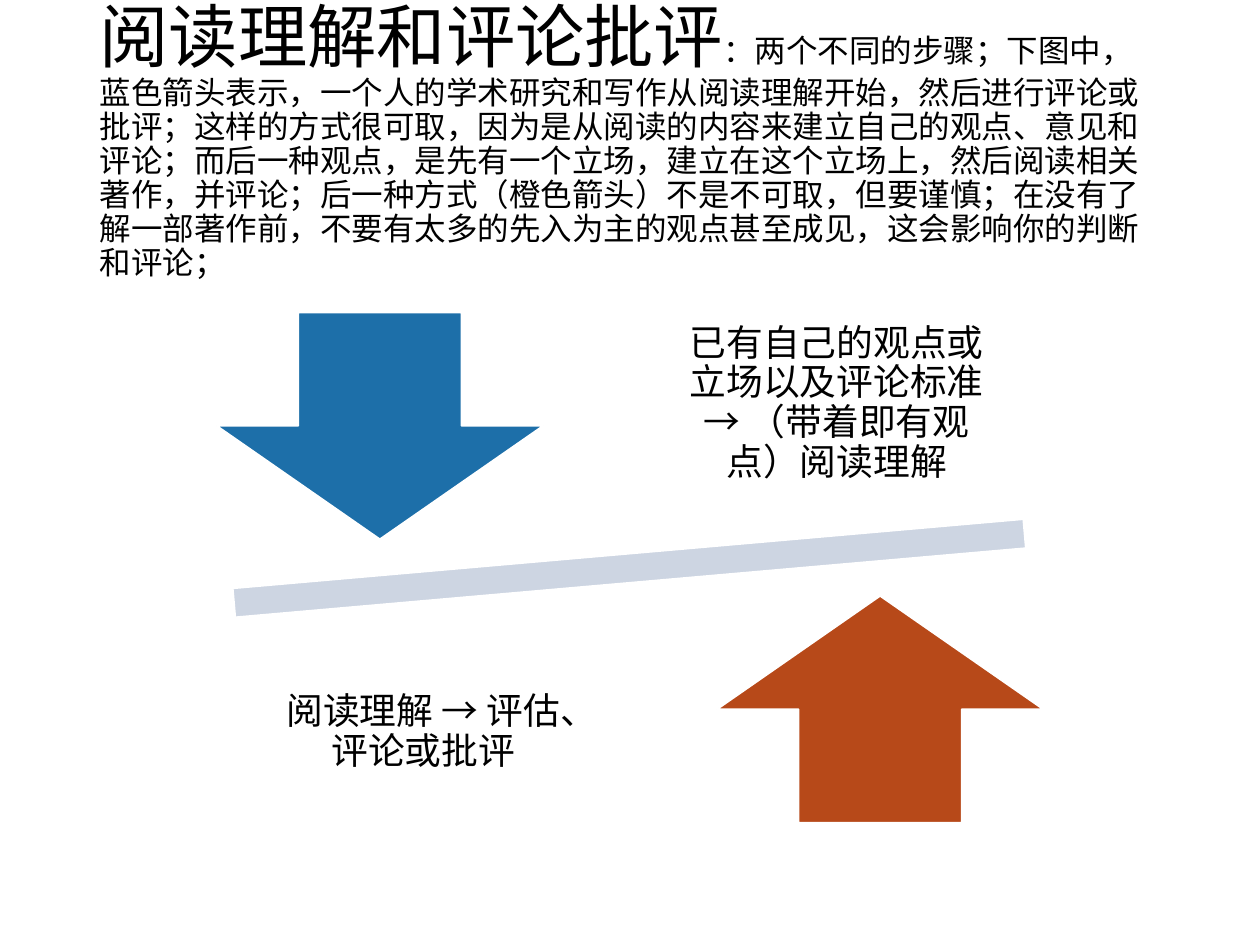
from dataclasses import dataclass

from pptx import Presentation
from pptx.dml.color import RGBColor
from pptx.enum import lang, shapes, text
from pptx.util import Inches, Pt


@dataclass(frozen=True)
class Theme:
    font: str = "Times New Roman"
    ink: RGBColor = RGBColor(0x00, 0x00, 0x00)
    outline: RGBColor = RGBColor(0xFF, 0xFF, 0xFF)
    beam: RGBColor = RGBColor(0xCD, 0xD5, 0xE2)
    reading_first: RGBColor = RGBColor(0x1D, 0x6F, 0xA9)
    opinion_first: RGBColor = RGBColor(0xB7, 0x49, 0x19)
    heading_size: float = 39.6
    explanation_size: float = 18
    caption_size: float = 21
    line_spacing: float = 0.9
    caption_gap: float = 0.35  # share of the caption size


@dataclass(frozen=True)
class Box:
    left: float
    top: float
    width: float
    height: float

    def lengths(self) -> tuple:
        return tuple(Inches(v) for v in (self.left, self.top, self.width, self.height))


@dataclass(frozen=True)
class Figure:
    preset: shapes.MSO_SHAPE
    box: Box
    color: RGBColor
    rotation: float = 0


@dataclass(frozen=True)
class Caption:
    wording: str
    box: Box


THEME = Theme()
ARROW_SIZE = (2.59, 1.8)
CAPTION_SIZE = (2.76, 1.89)

HEADING = "阅读理解和评论批评"
EXPLANATION = (
    "：两个不同的步骤；下图中，蓝色箭头表示，一个人的学术研究和写作从阅读理解开始，"
    "然后进行评论或批评；这样的方式很可取，因为是从阅读的内容来建立自己的观点、意见和评论；"
    "而后一种观点，是先有一个立场，建立在这个立场上，然后阅读相关著作，并评论；"
    "后一种方式（橙色箭头）不是不可取，但要谨慎；在没有了解一部著作前，"
    "不要有太多的先入为主的观点甚至成见，这会影响你的判断和评论；"
)
TITLE_BOX = Box(0.69, 0.4, 8.62, 1.45)

FIGURES = (
    Figure(shapes.MSO_SHAPE.MATH_MINUS, Box(0.71, 4.02, 8.57, 0.98), THEME.beam, 355),
    Figure(shapes.MSO_SHAPE.DOWN_ARROW, Box(1.72, 2.48, *ARROW_SIZE), THEME.reading_first),
    Figure(shapes.MSO_SHAPE.UP_ARROW, Box(5.69, 4.73, *ARROW_SIZE), THEME.opinion_first),
)
CAPTIONS = (
    Caption("已有自己的观点或立场以及评论标准 → （带着即有观点）阅读理解", Box(5.26, 2.26, *CAPTION_SIZE)),
    Caption("阅读理解 → 评估、评论或批评", Box(1.98, 4.87, *CAPTION_SIZE)),
)


def format_run(run, size: float) -> None:
    run.font.name = THEME.font
    run.font.size = Pt(size)
    run.font.color.rgb = THEME.ink
    run.font.language_id = lang.MSO_LANGUAGE_ID.SIMPLIFIED_CHINESE


def prepare_frame(frame) -> None:
    frame.word_wrap = True
    frame.auto_size = text.MSO_AUTO_SIZE.NONE
    frame.vertical_anchor = text.MSO_ANCHOR.MIDDLE


def fill_title(title) -> None:
    title.left, title.top, title.width, title.height = TITLE_BOX.lengths()
    prepare_frame(title.text_frame)
    paragraph = title.text_frame.paragraphs[0]
    paragraph.alignment = text.PP_ALIGN.LEFT
    paragraph.line_spacing = THEME.line_spacing
    for wording, size in ((HEADING, THEME.heading_size), (EXPLANATION, THEME.explanation_size)):
        run = paragraph.add_run()
        run.text = wording
        format_run(run, size)


def draw_figure(slide, figure: Figure) -> None:
    shape = slide.shapes.add_shape(figure.preset, *figure.box.lengths())
    shape.rotation = figure.rotation
    shape.shadow.inherit = False
    shape.fill.solid()
    shape.fill.fore_color.rgb = figure.color
    shape.line.color.rgb = THEME.outline
    shape.line.width = Pt(1)


def draw_caption(slide, caption: Caption) -> None:
    frame = slide.shapes.add_textbox(*caption.box.lengths()).text_frame
    prepare_frame(frame)
    frame.margin_left = frame.margin_right = Inches(0.16)
    frame.margin_top = frame.margin_bottom = Inches(0.16)
    frame.text = caption.wording
    paragraph = frame.paragraphs[0]
    paragraph.alignment = text.PP_ALIGN.CENTER
    paragraph.line_spacing = THEME.line_spacing
    paragraph.space_after = Pt(THEME.caption_size * THEME.caption_gap)
    format_run(paragraph.runs[0], THEME.caption_size)


def main() -> None:
    deck = Presentation()
    deck.slide_width, deck.slide_height = Inches(10), Inches(7.5)
    slide = deck.slides.add_slide(deck.slide_layouts.get_by_name("Title Only"))
    fill_title(slide.shapes.title)
    for figure in FIGURES:
        draw_figure(slide, figure)
    for caption in CAPTIONS:
        draw_caption(slide, caption)
    deck.save("out.pptx")


if __name__ == "__main__":
    main()
